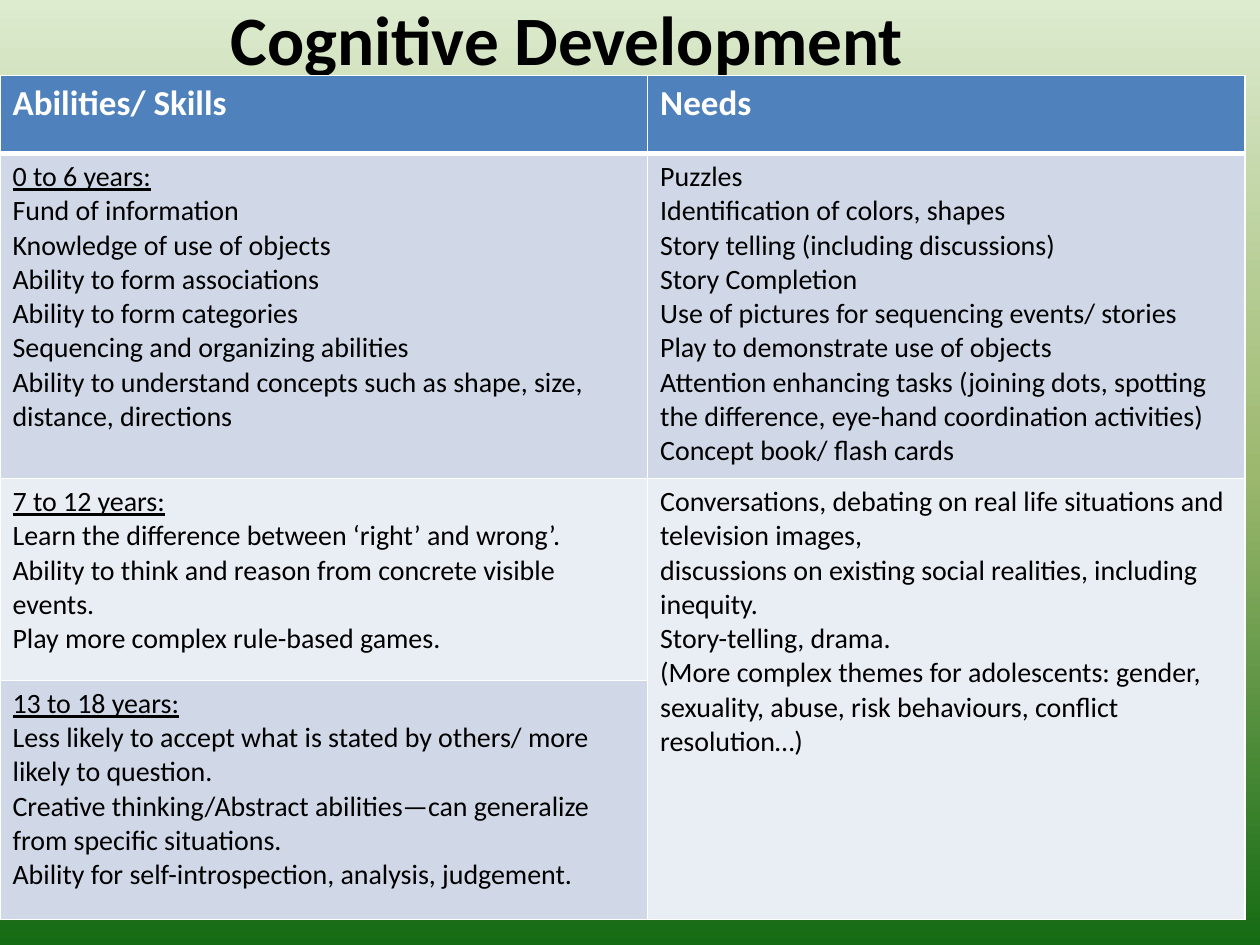
from lxml.etree import SubElement
from pptx import Presentation
from pptx.dml.color import RGBColor
from pptx.enum.text import MSO_ANCHOR, MSO_AUTO_SIZE, PP_ALIGN
from pptx.oxml.ns import qn
from pptx.util import Inches, Pt

COLORS = {"black": "000000", "white": "FFFFFF", "header": "4F81BD",
          "dark band": "D0D8E8", "light band": "E9EDF4"}
BACKGROUND_STOPS = [(0, "DDEBCF"), (50, "9CB86E"), (100, "156B13")]
FONT = "Calibri"
SLIDE_WIDTH, SLIDE_HEIGHT = 10, 7.5
TITLE = "Cognitive Development"
TITLE_WIDTH, TITLE_HEIGHT = 9, 0.6
COLUMN_WIDTHS = [5.14, 4.74]
ROW_HEIGHTS = [0.62, 2.58, 1.6, 1.9]
ROW_FILLS = ["header", "dark band", "light band", "dark band"]
HEADINGS = ["Abilities/ Skills", "Needs"]
ABILITIES = [
    ["0 to 6 years:",
     "Fund of information",
     "Knowledge of use of objects",
     "Ability to form associations",
     "Ability to form categories",
     "Sequencing and organizing abilities",
     "Ability to understand concepts such as shape, size, distance, directions"],
    ["7 to 12 years:",
     "Learn the difference between ‘right’ and wrong’.",
     "Ability to think and reason from concrete visible events.",
     "Play more complex rule-based games."],
    ["13 to 18 years:",
     "Less likely to accept what is stated by others/ more likely to question.",
     "Creative thinking/Abstract abilities—can generalize from specific situations.",
     "Ability for self-introspection, analysis, judgement."],
]
NEEDS = [
    ["Puzzles",
     "Identification of colors, shapes",
     "Story telling (including discussions)",
     "Story Completion",
     "Use of pictures for sequencing events/ stories",
     "Play to demonstrate use of objects",
     "Attention enhancing tasks (joining dots, spotting the difference, "
     "eye-hand coordination activities)",
     "Concept book/ flash cards"],
    ["Conversations, debating on real life situations and television images,",
     "discussions on existing social realities, including inequity.",
     "Story-telling, drama.",
     "(More complex themes for adolescents: gender, sexuality, abuse, "
     "risk behaviours, conflict resolution…)"],
]


def write_text(text_frame, lines, size=16, color="black", bold=False,
               align=PP_ALIGN.LEFT, underline_first=False):
    for index, line in enumerate(lines):
        paragraph = text_frame.paragraphs[0] if index == 0 else text_frame.add_paragraph()
        paragraph.alignment = align
        run = paragraph.add_run()
        run.text = line
        run.font.name = FONT
        run.font.size = Pt(size)
        run.font.bold = bold
        run.font.underline = underline_first and index == 0
        run.font.color.rgb = RGBColor.from_string(COLORS[color])


def paint_background(slide):
    fill = slide.background.fill
    fill.gradient()
    fill.gradient_angle = 270
    stops = slide.element.find(".//" + qn("a:gsLst"))
    for stop in list(stops):
        stops.remove(stop)
    for position, color in BACKGROUND_STOPS:
        stop = SubElement(stops, qn("a:gs"), pos=str(position * 1000))
        SubElement(stop, qn("a:srgbClr"), val=color)


def format_cell(cell, row):
    properties = cell._tc.get_or_add_tcPr()
    widths = {"lnL": 1, "lnR": 1, "lnT": 3 if row == 1 else 1, "lnB": 3 if row == 0 else 1}
    for side, width in widths.items():
        line = SubElement(properties, qn("a:" + side), w=str(Pt(width)))
        SubElement(SubElement(line, qn("a:solidFill")), qn("a:srgbClr"), val=COLORS["white"])


def add_title(slide):
    title = slide.shapes.title
    title.left, title.top = 0, 0
    title.width, title.height = Inches(TITLE_WIDTH), Inches(TITLE_HEIGHT)
    title.text_frame.auto_size = MSO_AUTO_SIZE.NONE
    title.text_frame.vertical_anchor = MSO_ANCHOR.MIDDLE
    write_text(title.text_frame, [TITLE], size=39.6, bold=True, align=PP_ALIGN.CENTER)


def add_development_table(slide):
    table = slide.shapes.add_table(
        len(ROW_HEIGHTS), len(COLUMN_WIDTHS), 0, Inches(TITLE_HEIGHT),
        Inches(sum(COLUMN_WIDTHS)), Inches(sum(ROW_HEIGHTS))).table
    for column, width in zip(table.columns, COLUMN_WIDTHS):
        column.width = Inches(width)
    for index, (row, height) in enumerate(zip(table.rows, ROW_HEIGHTS)):
        row.height = Inches(height)
        for cell in row.cells:
            format_cell(cell, index)
            cell.fill.solid()
            cell.fill.fore_color.rgb = RGBColor.from_string(COLORS[ROW_FILLS[index]])
    table.cell(2, 1).merge(table.cell(3, 1))
    for column, heading in enumerate(HEADINGS):
        write_text(table.cell(0, column).text_frame, [heading],
                   size=20, color="white", bold=True)
    for column, entries in enumerate([ABILITIES, NEEDS]):
        for row, lines in enumerate(entries, start=1):
            write_text(table.cell(row, column).text_frame, lines, underline_first=column == 0)


def main():
    presentation = Presentation()
    presentation.slide_width = Inches(SLIDE_WIDTH)
    presentation.slide_height = Inches(SLIDE_HEIGHT)
    slide = presentation.slides.add_slide(presentation.slide_layouts[5])
    paint_background(slide)
    add_title(slide)
    add_development_table(slide)
    presentation.save("out.pptx")


if __name__ == "__main__":
    main()
